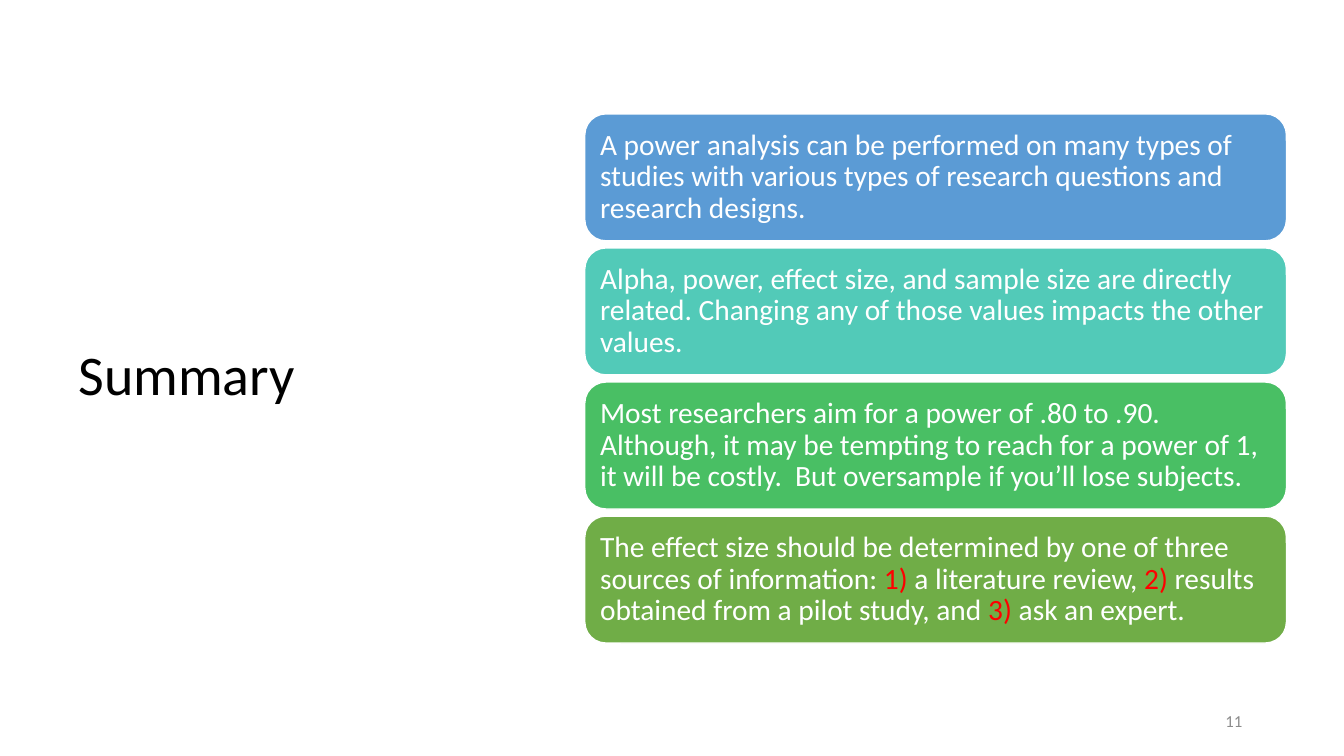
from pptx import Presentation
from pptx.dml.color import RGBColor
from pptx.enum import shapes, text
from pptx.util import Inches, Pt

WHITE = RGBColor(0xFF, 0xFF, 0xFF)
BLACK = RGBColor(0, 0, 0)
RED = RGBColor(0xFF, 0, 0)
GRAY = RGBColor(0x8C, 0x8C, 0x8C)
BLUE = RGBColor(0x5B, 0x9B, 0xD5)
TEAL = RGBColor(0x52, 0xCA, 0xB8)
GREEN = RGBColor(0x49, 0xBF, 0x64)
OLIVE = RGBColor(0x70, 0xAD, 0x47)

POINTS = [
    (BLUE, ["A power analysis can be performed on many types of studies "
            "with various types of research questions and research designs."]),
    (TEAL, ["Alpha, power, effect size, and sample size are directly related. "
            "Changing any of those values impacts the other values."]),
    (GREEN, ["Most researchers aim for a power of .80 to .90. Although, it may be "
             "tempting to reach for a power of 1, it will be costly.  "
             "But oversample if you’ll lose subjects."]),
    (OLIVE, ["The effect size should be determined by one of three sources of information: ",
             "1) ", "a literature review, ",
             "2) ", "results obtained from a pilot study, and ",
             "3) ", "ask an expert."]),
]


def write(shape, runs, size, color, accent=None, align=text.PP_ALIGN.LEFT,
          space=1.0, pad=(0.1, 0.05)):
    frame = shape.text_frame
    frame.word_wrap = True
    frame.vertical_anchor = text.MSO_ANCHOR.MIDDLE
    frame.margin_left = frame.margin_right = Inches(pad[0])
    frame.margin_top = frame.margin_bottom = Inches(pad[1])
    para = frame.paragraphs[0]
    para.alignment = align
    para.line_spacing = space
    for i, words in enumerate(runs):
        run = para.add_run()
        run.text = words
        run.font.name = "Calibri"
        run.font.size = Pt(size)
        run.font.color.rgb = accent if i % 2 else color


def label(slide, box, words, size, color, **style):
    shape = slide.shapes.add_textbox(*map(Inches, box))
    write(shape, [words], size, color, **style)


def card(slide, box, fill, runs):
    shape = slide.shapes.add_shape(
        shapes.MSO_SHAPE.ROUNDED_RECTANGLE, *map(Inches, box))
    shape.shadow.inherit = False
    shape.fill.solid()
    shape.fill.fore_color.rgb = fill
    shape.line.color.rgb = WHITE
    shape.line.width = Pt(1)
    write(shape, runs, 21, WHITE, accent=RED, space=0.9, pad=(0.09, 0.09))


def stack(slide, box, points, gap=0.07):
    left, top, width, height = box
    tall = (height - gap * (len(points) - 1)) / len(points)
    for i, (fill, runs) in enumerate(points):
        card(slide, (left, top + i * (tall + gap), width, tall), fill, runs)


def main():
    deck = Presentation()
    deck.slide_width, deck.slide_height = Inches(13.33), Inches(7.5)
    slide = deck.slides.add_slide(deck.slide_layouts[6])
    label(slide, (0.68, 1.27, 3.94, 4.95), "Summary", 40, BLACK, space=0.9)
    stack(slide, (5.8, 1.13, 6.96, 5.25), POINTS)
    label(slide, (9.42, 6.95, 3, 0.4), "11", 12, GRAY, align=text.PP_ALIGN.RIGHT)
    deck.save("out.pptx")


if __name__ == "__main__":
    main()
